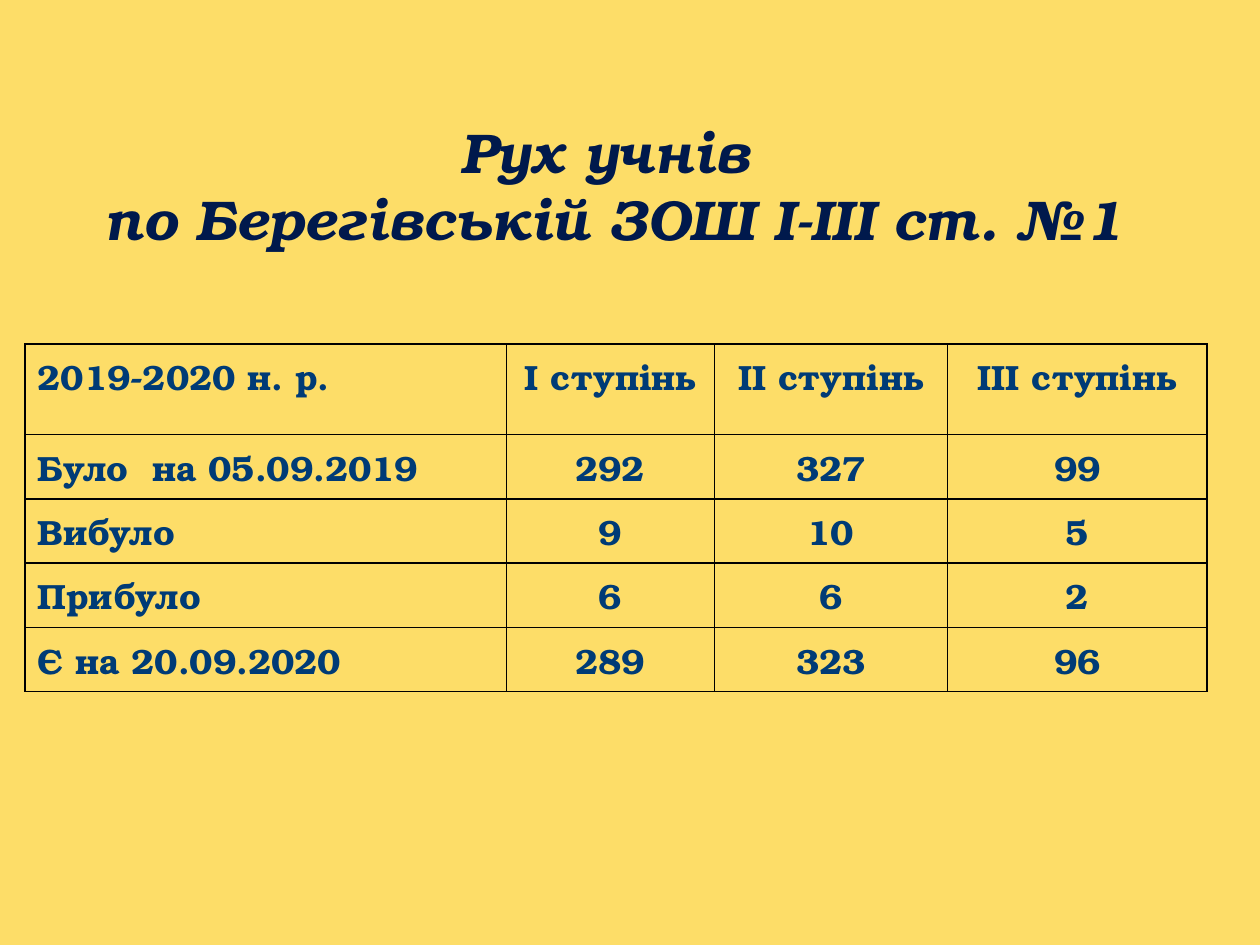
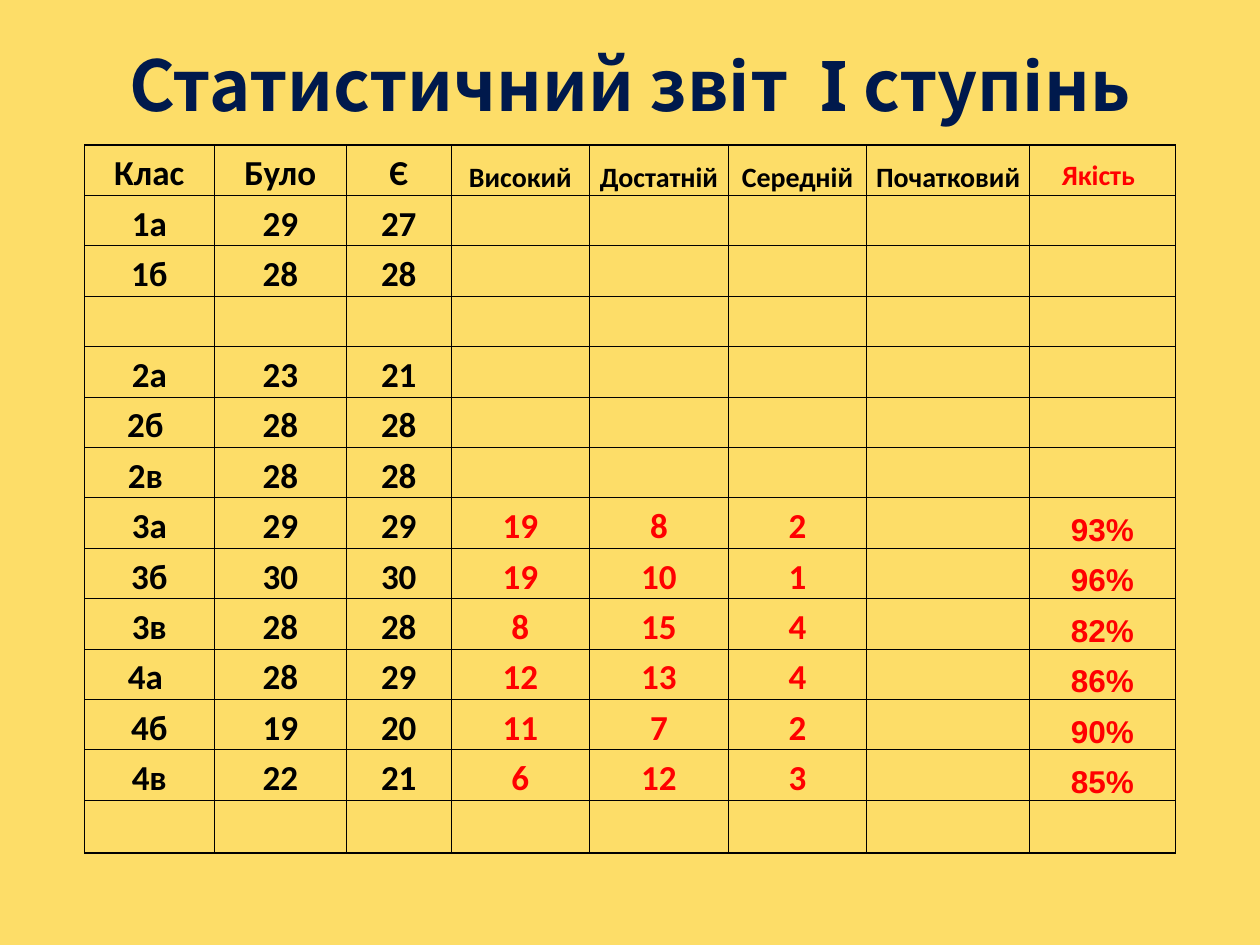
from lxml.etree import SubElement
from pptx import Presentation
from pptx.dml.color import RGBColor
from pptx.enum.text import MSO_ANCHOR, MSO_AUTO_SIZE, PP_ALIGN
from pptx.oxml.ns import qn
from pptx.util import Inches, Pt

BACKGROUND = RGBColor(0xFD, 0xDD, 0x68)
NAVY = RGBColor(0x00, 0x19, 0x4C)
BLUE = RGBColor(0x00, 0x3B, 0x76)
BLACK = RGBColor(0x00, 0x00, 0x00)
RED = RGBColor(0xFF, 0x00, 0x00)
SERIF, SANS, TITLE_SANS, PERCENT_FONT = "TeX Gyre Bonum", "Calibri", "Noto Sans CJK KR", "Arial"

MOVEMENT_TITLE = "Рух учнів \vпо Берегівській ЗОШ І-ІІІ ст. №1"
MOVEMENT_ROWS = [
    ("2019-2020 н. р.", "І ступінь", "ІІ ступінь", "ІІІ ступінь"),
    ("Було  на 05.09.2019", "292", "327", "99"),
    ("Вибуло", "9", "10", "5"),
    ("Прибуло", "6", "6", "2"),
    ("Є на 20.09.2020", "289", "323", "96"),
]
MOVEMENT_WIDTHS = [3.82, 1.65, 1.85, 2.06]
MOVEMENT_HEIGHTS = [0.72] + [0.51] * 4

REPORT_TITLE = "Статистичний звіт  І ступінь"
REPORT_ROWS = [
    ("Клас", "Було", "Є", "Високий", "Достатній", "Середній", "Початковий", "Якість"),
    ("1а", "29", "27"),
    ("1б", "28", "28"),
    (),
    ("2а", "23", "21"),
    ("2б ", "28", "28"),
    ("2в ", "28", "28"),
    ("3а", "29", "29", "19", "8", "2", "", "93%"),
    ("3б", "30", "30", "19", "10", "1", "", "96%"),
    ("3в", "28", "28", "8", "15", "4", "", "82%"),
    ("4а ", "28", "29", "12", "13", "4", "", "86%"),
    ("4б", "19", "20", "11", "7", "2", "", "90%"),
    ("4в", "22", "21", "6", "12", "3", "", "85%"),
    (),
]
REPORT_WIDTHS = [1.03, 1.05, 0.83, 1.1, 1.1, 1.1, 1.29, 1.16]
REPORT_HEIGHTS = [0.4] * 13 + [0.42]
FIRST_LEVEL, QUALITY = 3, 7


def set_font(font, name, size, color, italic=False):
    """Apply a bold typeface with the given size and colour."""
    font.name, font.size, font.bold, font.italic = name, Pt(size), True, italic
    font.color.rgb = color


def add_page(deck, text, area, font_name, size, italic=False):
    """Add a title-only slide and format its title."""
    page = deck.slides.add_slide(deck.slide_layouts[5])
    title = page.shapes.title
    title.left, title.top, title.width, title.height = map(Inches, area)
    frame = title.text_frame
    frame.text = text
    frame.auto_size = MSO_AUTO_SIZE.NONE
    frame.vertical_anchor = MSO_ANCHOR.MIDDLE
    paragraph = frame.paragraphs[0]
    paragraph.alignment = PP_ALIGN.CENTER
    set_font(paragraph.font, font_name, size, NAVY, italic)
    return page


def add_borders(cell, widths):
    """Draw black left, right, top and bottom borders of the given point widths."""
    properties = cell._tc.get_or_add_tcPr()
    for side, width in zip("LRTB", widths):
        line = SubElement(properties, qn(f"a:ln{side}"), w=str(Pt(width)))
        fill = SubElement(line, qn("a:solidFill"))
        SubElement(fill, qn("a:srgbClr"), val=str(BLACK))


def add_grid(page, rows, left, top, widths, heights, border_widths):
    """Add an unfilled table and return its cells by row and column."""
    frame = page.shapes.add_table(len(heights), len(widths), Inches(left), Inches(top),
                                  Inches(sum(widths)), Inches(sum(heights)))
    table = frame.table
    table.first_row = table.horz_banding = False
    for column, width in zip(table.columns, widths):
        column.width = Inches(width)
    for row, height in zip(table.rows, heights):
        row.height = Inches(height)
    cells = {}
    for r, texts in enumerate(rows):
        for c in range(len(widths)):
            cell = cells[r, c] = table.cell(r, c)
            if c < len(texts):
                cell.text = texts[c]
            cell.text_frame.paragraphs[0].alignment = PP_ALIGN.CENTER
            add_borders(cell, border_widths(r, c))
            cell.fill.background()
    return cells


def report_borders(r, c):
    """Return border widths: heavy around the quality column, top and bottom."""
    last_row = len(REPORT_ROWS) - 1
    heavy = (c == QUALITY, c >= QUALITY - 1, r == 0, r == last_row)
    return [1 if is_heavy else 0.5 for is_heavy in heavy]


def report_font(r, c):
    """Return typeface, size and colour for a cell of the class report."""
    if r == 0:
        return SANS, 20 if c < FIRST_LEVEL else 16, RED if c == QUALITY else BLACK
    if c == QUALITY:
        return PERCENT_FONT, 18, RED
    return SANS, 20, BLACK if c < FIRST_LEVEL else RED


def build_movement(deck):
    """Build the slide on pupil movement."""
    page = add_page(deck, MOVEMENT_TITLE, (0, 0.52, 9.76, 1.89), SERIF, 32, italic=True)
    cells = add_grid(page, MOVEMENT_ROWS, 0.2, 2.73, MOVEMENT_WIDTHS, MOVEMENT_HEIGHTS,
                     lambda r, c: [1] * 4)
    for (r, c), cell in cells.items():
        paragraph = cell.text_frame.paragraphs[0]
        paragraph.space_before = Pt(4)
        set_font(paragraph.font, SERIF, 20, BLUE)
        if c == 0:
            paragraph.alignment = PP_ALIGN.LEFT


def build_report(deck):
    """Build the slide with the statistics by class."""
    page = add_page(deck, REPORT_TITLE, (0, 0.25, 10, 0.83), TITLE_SANS, 40)
    cells = add_grid(page, REPORT_ROWS, 0.67, 1.15, REPORT_WIDTHS, REPORT_HEIGHTS,
                     report_borders)
    for (r, c), cell in cells.items():
        cell.vertical_anchor = MSO_ANCHOR.BOTTOM
        cell.margin_left = cell.margin_right = cell.margin_top = Inches(0.01)
        cell.margin_bottom = 0
        set_font(cell.text_frame.paragraphs[0].font, *report_font(r, c))
    span = cells[0, QUALITY].text_frame.paragraphs[0].add_run()
    span.text = " "
    span.font.size = Pt(20)


def main():
    """Build and save the deck."""
    deck = Presentation()
    deck.slide_width, deck.slide_height = Inches(10), Inches(7.5)
    background = deck.slide_master.background.fill
    background.solid()
    background.fore_color.rgb = BACKGROUND
    build_movement(deck)
    build_report(deck)
    deck.save("out.pptx")


if __name__ == "__main__":
    main()
